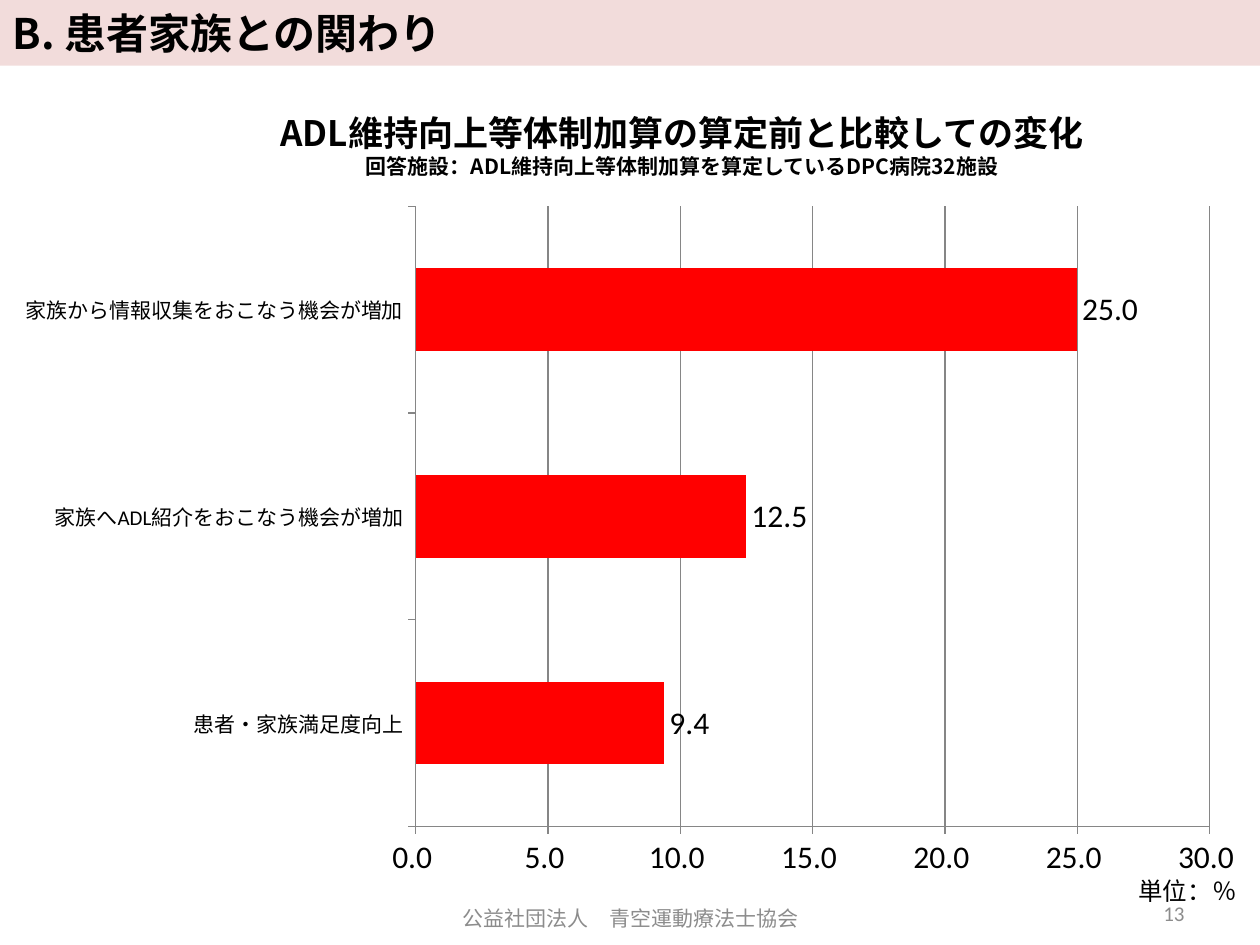
from lxml.etree import SubElement
from pptx import Presentation
from pptx.chart.data import CategoryChartData
from pptx.dml.color import RGBColor
from pptx.enum.chart import XL_CHART_TYPE as ChartType
from pptx.enum.chart import XL_LABEL_POSITION as LabelPosition
from pptx.enum.chart import XL_TICK_MARK as TickMark
from pptx.enum.text import MSO_ANCHOR as Anchor
from pptx.enum.text import PP_ALIGN as Align
from pptx.oxml import parse_xml
from pptx.oxml.ns import nsdecls, qn
from pptx.util import Pt

COLORS = {
    "text": "000000",
    "muted": "8C8C8C",
    "band": "F2DCDB",
    "bar": "FF0000",
    "grid": "868686",
}
JAPANESE = "Noto Sans CJK JP"
LATIN = "Calibri"

CHANGES = {
    "患者・家族満足度向上": 9.4,
    "家族へADL紹介をおこなう機会が増加": 12.5,
    "家族から情報収集をおこなう機会が増加": 25.0,
}


def color(name):
    return RGBColor.from_string(COLORS[name])


def add_span(para, text, size, font=JAPANESE, ink="text", bold=False):
    span = para.add_run()
    span.text = text
    span.font.size = Pt(size)
    span.font.bold = bold
    span.font.name = font
    span.font.color.rgb = color(ink)
    east_asian = SubElement(span.font._element, qn("a:ea"))
    east_asian.set("typeface", JAPANESE)


def add_title(page, text):
    title = page.shapes.title
    title.left, title.top, title.width, title.height = Pt(0), Pt(0), Pt(720), Pt(37.5)
    title.fill.solid()
    title.fill.fore_color.rgb = color("band")
    title.text_frame.vertical_anchor = Anchor.MIDDLE
    para = title.text_frame.paragraphs[0]
    para.alignment = Align.LEFT
    add_span(para, text, 24, bold=True)


def add_text(page, area, lines, align=Align.LEFT, anchor=Anchor.TOP, wrap=True, **style):
    """Add a text box; lines holds one (text, size) pair per paragraph."""
    box = page.shapes.add_textbox(*map(Pt, area))
    frame = box.text_frame
    frame.word_wrap = wrap
    frame.vertical_anchor = anchor
    for index, (text, size) in enumerate(lines):
        para = frame.add_paragraph() if index else frame.paragraphs[0]
        para.alignment = align
        add_span(para, text, size, **style)


def set_plot_area(chart, left, top, width, height):
    """Fix the inner plot area, in fractions of the chart."""
    plot_area = chart._chartSpace.chart.plotArea
    for old in plot_area.findall(qn("c:layout")):
        plot_area.remove(old)
    places = "".join(
        f'<c:{key} val="{value}"/>'
        for key, value in (("x", left), ("y", top), ("w", width), ("h", height))
    )
    plot_area.insert(0, parse_xml(
        f'<c:layout {nsdecls("c")}><c:manualLayout><c:layoutTarget val="inner"/>'
        f'<c:xMode val="edge"/><c:yMode val="edge"/>{places}'
        "</c:manualLayout></c:layout>"
    ))


def style_line(line):
    line.width = Pt(0.75)
    line.color.rgb = color("grid")


def add_bar_chart(page, area, values):
    data = CategoryChartData(number_format="0.0_ ")
    data.categories = list(values)
    data.add_series("変化", list(values.values()))
    chart = page.shapes.add_chart(ChartType.BAR_CLUSTERED, *map(Pt, area), data).chart
    chart.has_legend = False
    chart.has_title = False
    chart.font.size = Pt(18)
    chart.font.name = LATIN
    chart.font.color.rgb = color("text")
    set_plot_area(chart, 0.33, 0.02, 0.63, 0.89)

    for axis in (chart.category_axis, chart.value_axis):
        axis.major_tick_mark = TickMark.OUTSIDE
        axis.minor_tick_mark = TickMark.NONE
        style_line(axis.format.line)
    chart.category_axis.tick_labels.font.size = Pt(12)

    scale = chart.value_axis
    scale.minimum_scale, scale.maximum_scale, scale.major_unit = 0, 30, 5
    scale.has_major_gridlines = True
    style_line(scale.major_gridlines.format.line)
    scale.tick_labels.number_format = "0.0_ "
    scale.tick_labels.number_format_is_linked = False

    plot = chart.plots[0]
    plot.gap_width = 150
    plot.vary_by_categories = False
    bars = plot.series[0].format.fill
    bars.solid()
    bars.fore_color.rgb = color("bar")
    plot.has_data_labels = True
    labels = plot.data_labels
    labels.show_value = True
    labels.position = LabelPosition.OUTSIDE_END
    labels.number_format = "0.0_ "
    labels.number_format_is_linked = False


def main():
    deck = Presentation()
    deck.slide_width, deck.slide_height = Pt(720), Pt(540)
    page = deck.slides.add_slide(deck.slide_layouts[5])

    add_title(page, "B. 患者家族との関わり")
    add_text(page, (643.5, 497, 71.5, 24.5), [("単位：％", 14)], wrap=False)
    add_text(
        page, (149, 60, 481.5, 46),
        [("ADL維持向上等体制加算の算定前と比較しての変化", 20),
         ("回答施設：ADL維持向上等体制加算を算定しているDPC病院32施設", 12)],
        align=Align.CENTER, bold=True,
    )
    add_bar_chart(page, (0, 110, 720, 398), CHANGES)

    footer = {"anchor": Anchor.MIDDLE, "font": LATIN, "ink": "muted"}
    add_text(page, (516, 507.5, 168, 29), [("13", 12)], align=Align.RIGHT, **footer)
    add_text(page, (181.5, 510, 358, 29), [("公益社団法人　青空運動療法士協会", 12)],
             align=Align.CENTER, **footer)

    deck.save("out.pptx")


if __name__ == "__main__":
    main()
